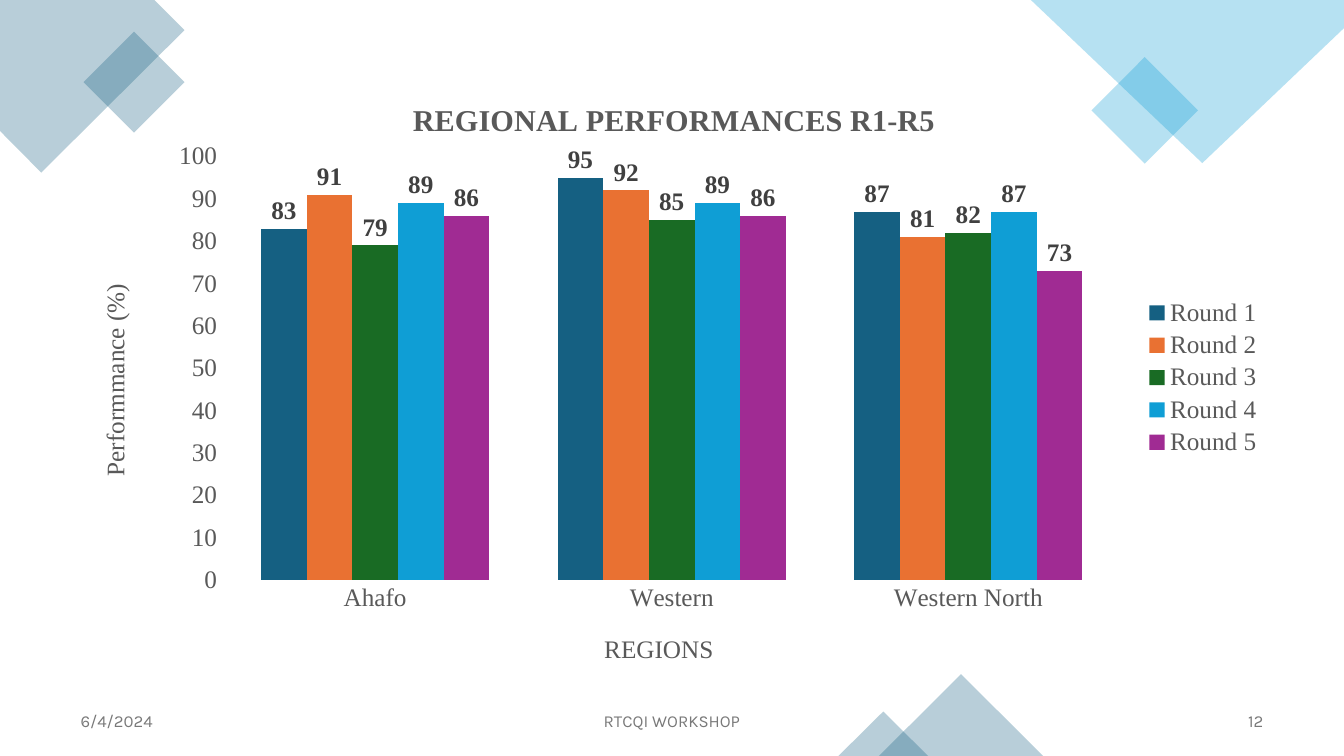
from pptx import Presentation
from pptx.chart.data import CategoryChartData as ChartData
from pptx.dml.color import RGBColor
from pptx.enum.chart import XL_CHART_TYPE as Kind, XL_LABEL_POSITION as Place
from pptx.enum.chart import XL_LEGEND_POSITION as Side, XL_TICK_MARK as Tick
from pptx.enum.shapes import MSO_SHAPE as Preset
from pptx.enum.text import MSO_ANCHOR as Anchor, PP_ALIGN as Align
from pptx.oxml import parse_xml
from pptx.oxml.ns import nsdecls
from pptx.util import Cm, Pt

SERIF = "Times New Roman"
NAVY, SKY, GREY = "156082", "0F9ED5", "595959"
REGIONS = ["Ahafo", "Western", "Western North"]
ROUNDS = [
    ("Round 1", NAVY, (83, 95, 87)),
    ("Round 2", "E97132", (91, 92, 81)),
    ("Round 3", "196B24", (79, 85, 82)),
    ("Round 4", SKY, (89, 89, 87)),
    ("Round 5", "A02B93", (86, 86, 73)),
]
# Lengths below are in centimetres
CORNERS = [
    (NAVY, [(0, 0), (3.89, 0), (4.65, 0.76), (1.04, 4.35), (0, 3.3)]),
    (SKY, [(25.98, 0), (33.87, 0), (33.87, 0.71), (30.3, 4.11)]),
]
# preset, colour, left, top, width, height, turn
PIECES = [
    (Preset.RECTANGLE, NAVY, 2.48, 1.17, 1.8, 1.8, 315),
    (Preset.RECTANGLE, SKY, 27.9, 1.83, 1.9, 1.9, 315),
    (Preset.ISOSCELES_TRIANGLE, NAVY, 22.15, 16.99, 4.14, 2.06, 0),
    (Preset.ISOSCELES_TRIANGLE, NAVY, 21.13, 17.93, 2.26, 1.12, 0),
]
FOOTER = [
    ("6/4/2024", 1.78, 7.62, Align.LEFT),
    ("RTCQI WORKSHOP", 11.22, 11.43, Align.CENTER),
    ("12", 24.47, 7.62, Align.RIGHT),
]


def rgb(code):
    return RGBColor.from_string(code)


def style(font, size, color, name=SERIF, bold=False):
    font.size, font.name, font.bold = Pt(size), name, bold
    font.color.rgb = rgb(color)


def tint(shape, color):
    """Fill at 30 % opacity, with no line or shadow."""
    shape.shadow.inherit = False
    shape.line.fill.background()
    shape.fill.solid()
    shape.fill.fore_color.rgb = rgb(color)
    clr = shape.fill._xPr.find(".//{*}srgbClr")
    clr.append(parse_xml(f'<a:alpha {nsdecls("a")} val="30000"/>'))


def pin(node, x, y, size=None):
    """Fix a chart part at fractions of the chart's width and height."""
    vals = [("xMode", "edge"), ("yMode", "edge"), ("x", x), ("y", y)]
    if size:
        vals.insert(0, ("layoutTarget", "inner"))
        vals += [("w", size[0]), ("h", size[1])]
    body = "".join(f'<c:{tag} val="{val}"/>' for tag, val in vals)
    for old in node.findall("{*}layout"):
        node.remove(old)
    lay = parse_xml(f'<c:layout {nsdecls("c")}><c:manualLayout>{body}'
                    '</c:manualLayout></c:layout>')
    text = node.find("{*}tx")
    if text is None:
        node.insert(0, lay)
    else:
        text.addnext(lay)


def title(owner, text, x, y, size=18, bold=False):
    head = (owner.chart_title if hasattr(owner, "chart_title")
            else owner.axis_title)
    run = head.text_frame.paragraphs[0].add_run()
    run.text = text
    style(run.font, size, GREY, bold=bold)
    pin(head._element, x, y)


def add_chart(slide):
    data = ChartData()
    data.categories = REGIONS
    for name, _, vals in ROUNDS:
        data.add_series(name, vals)
    chart = slide.shapes.add_chart(
        Kind.COLUMN_CLUSTERED, Cm(1.78), Cm(1.78), Cm(30.3), Cm(15.47), data
    ).chart
    style(chart.font, 18, GREY)
    title(chart, "REGIONAL PERFORMANCES R1-R5", 0.28, 0.04, 21.6, True)
    chart.has_legend = True
    chart.legend.position = Side.RIGHT
    chart.legend.include_in_layout = False
    style(chart.legend.font, 18, GREY)

    base, scale = chart.category_axis, chart.value_axis
    title(base, "REGIONS", 0.44, 0.91)
    title(scale, "Performmance (%)", 0.02, 0.34)
    for axis, tick in ((base, Tick.NONE), (scale, Tick.OUTSIDE)):
        axis.has_major_gridlines = False
        axis.major_tick_mark = tick
        axis.minor_tick_mark = Tick.NONE
        axis.format.line.fill.background()
        style(axis.tick_labels.font, 18, GREY)
    scale.minimum_scale, scale.maximum_scale, scale.major_unit = 0, 100, 10

    plot = chart.plots[0]
    plot.gap_width, plot.overlap, plot.vary_by_categories = 150, 0, False
    for bars, (_, color, _) in zip(plot.series, ROUNDS):
        bars.format.fill.solid()
        bars.format.fill.fore_color.rgb = rgb(color)
        tags = bars.data_labels
        tags.show_value, tags.position = True, Place.OUTSIDE_END
        style(tags.font, 18, "404040", bold=True)
    pin(chart._chartSpace.find(".//{*}plotArea"), 0.13, 0.14, (0.74, 0.69))


def main():
    deck = Presentation()
    deck.slide_width, deck.slide_height = Cm(33.87), Cm(19.05)
    slide = deck.slides.add_slide(deck.slide_layouts[6])
    shapes = slide.shapes
    for color, dots in CORNERS:
        pts = [(Cm(x), Cm(y)) for x, y in dots]
        path = shapes.build_freeform(*pts[0])
        path.add_line_segments(pts[1:])
        tint(path.convert_to_shape(), color)
    for kind, color, *box, turn in PIECES:
        piece = shapes.add_shape(kind, *map(Cm, box))
        piece.rotation = turn
        tint(piece, color)
    for text, left, width, align in FOOTER:
        frame = shapes.add_textbox(
            Cm(left), Cm(17.65), Cm(width), Cm(1.02)).text_frame
        frame.word_wrap, frame.vertical_anchor = True, Anchor.MIDDLE
        para = frame.paragraphs[0]
        para.alignment, para.space_after = align, Pt(6)
        run = para.add_run()
        run.text = text
        style(run.font, 12, "797979", "Karla")
    add_chart(slide)
    deck.save("out.pptx")


if __name__ == "__main__":
    main()
